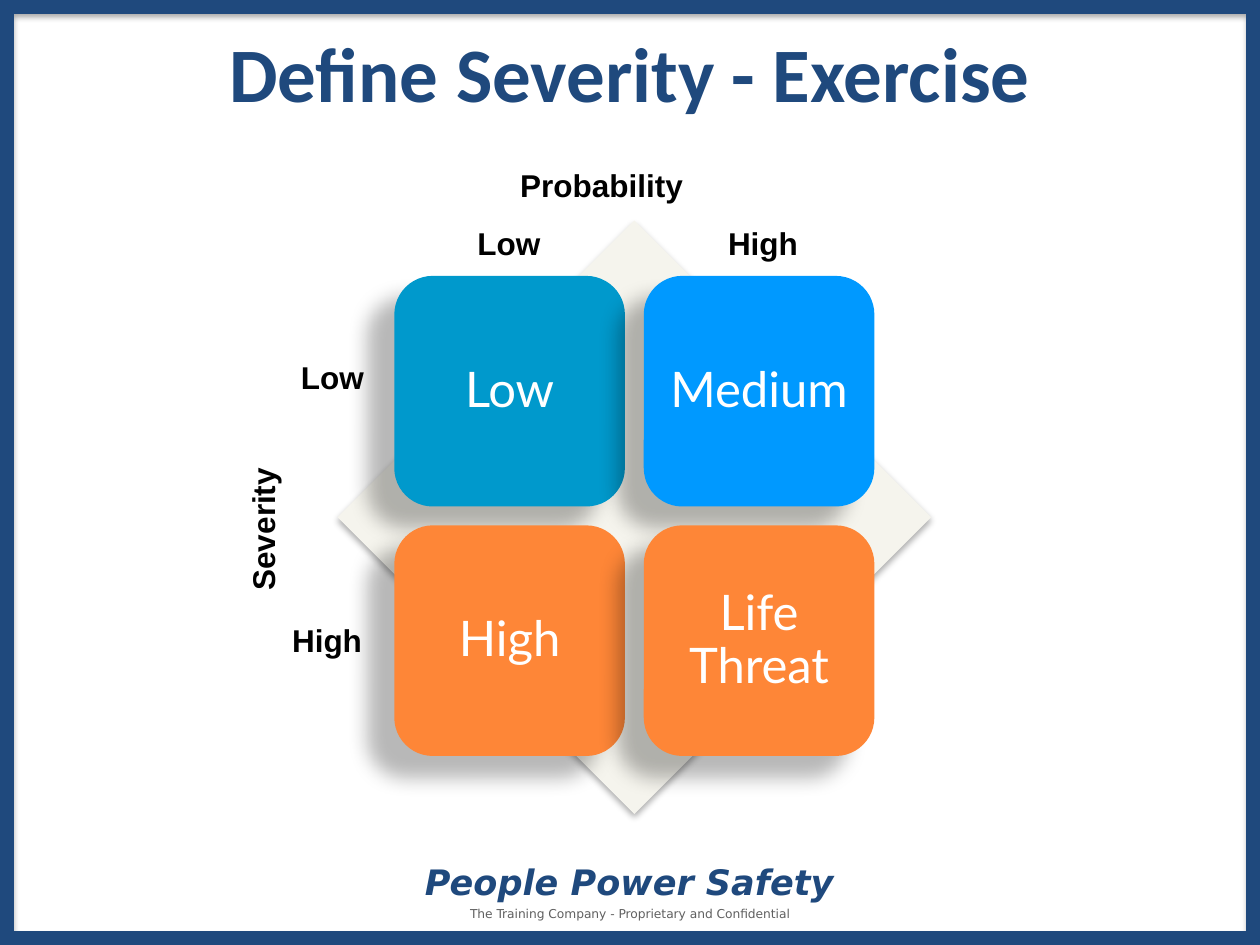
"""Build the severity and probability matrix slide."""
from typing import Any, NamedTuple

from lxml import etree
from pptx import Presentation, util as u
from pptx.dml import color
from pptx.enum import shapes, text
from pptx.oxml import ns

COLOURS = {"navy": "1F497D", "grey": "606060", "cream": "F5F4ED", "teal": "0099CC",
           "blue": "0099FF", "orange": "FE8637", "white": "FFFFFF", "black": "000000"}


class Area(NamedTuple):
    left: float
    top: float
    width: float
    height: float


class Shadow(NamedTuple):
    opacity: int
    blur: float
    distance: float
    angle: int


class Tile(NamedTuple):
    words: str
    colour: str


class Label(NamedTuple):
    words: str
    area: Area
    wrap: bool = False
    rotation: int = 0


BORDER_SHADOW = Shadow(35, 3.1, 1.8, 90)
DIAMOND_SHADOW = Shadow(32, 3.5, 2.2, 90)
TILE_SHADOW = Shadow(28, 11.8, 19.7, 141)
TILE_SIZE, TILE_PITCH, TILE_LEFT, TILE_TOP = 1.83, 1.98, 3.13, 2.19
TILES = [[Tile("Low", "teal"), Tile("Medium", "blue")],
         [Tile("High", "orange"), Tile("Life Threat", "orange")]]
LABELS = [
    Label("Probability", Area(4.03, 1.27, 2.01, 0.52), True),
    Label("Severity", Area(1.36, 3.74, 1.57, 0.52), True, 270),
    Label("Low", Area(2.29, 2.79, 0.71, 0.4)),
    Label("High", Area(2.22, 4.88, 0.76, 0.4)),
    Label("Low", Area(3.69, 1.73, 0.71, 0.4)),
    Label("High", Area(5.68, 1.73, 0.76, 0.4)),
]
LABEL_FONT = {"name": "Arial", "size": u.Pt(18), "bold": True}
TILE_FONT = {"name": "Lato", "size": u.Pt(28)}
TITLE_FONT = {"name": "Calibri", "size": u.Pt(44), "bold": True}
MOTTO_FONT = {"name": "DejaVu Sans", "size": u.Pt(20), "bold": True, "italic": True}
NOTICE_FONT = {"name": "DejaVu Sans", "size": u.Pt(7)}
CENTRE, LEFT = text.PP_ALIGN.CENTER, text.PP_ALIGN.LEFT
MIDDLE, TOP = text.MSO_ANCHOR.MIDDLE, text.MSO_ANCHOR.TOP


def rgb(name: str) -> color.RGBColor:
    """Return a named colour."""
    return color.RGBColor.from_string(COLOURS[name])


def inches(area: Area) -> list[u.Length]:
    """Convert an area to lengths."""
    return [u.Inches(value) for value in area]


def apply(target: Any, values: dict[str, Any]) -> None:
    """Set each named attribute on the target."""
    for name, value in values.items():
        setattr(target, name, value)


def write(shape: Any, words: str, font: dict[str, Any], colour: str,
          align: Any = CENTRE, anchor: Any = MIDDLE, wrap: bool = True,
          inset: float = 0.1) -> Any:
    """Write one formatted paragraph and return it."""
    frame = shape.text_frame
    apply(frame, {"word_wrap": wrap, "auto_size": text.MSO_AUTO_SIZE.NONE,
                  "vertical_anchor": anchor, "margin_left": u.Inches(inset),
                  "margin_right": u.Inches(inset)})
    para = frame.paragraphs[0]
    para.alignment = align
    span = para.add_run()
    span.text = words
    apply(span.font, font)
    span.font.color.rgb = rgb(colour)
    return para


def add_shadow(shape: Any, shadow: Shadow) -> None:
    """Give a shape an outer shadow."""
    shape.shadow.inherit = False
    effects = shape._element.spPr.find(ns.qn("a:effectLst"))
    outer = etree.SubElement(
        effects, ns.qn("a:outerShdw"), blurRad=str(u.Pt(shadow.blur)),
        dist=str(u.Pt(shadow.distance)), dir=str(shadow.angle * 60000),
        rotWithShape="0")
    black = etree.SubElement(outer, ns.qn("a:srgbClr"), val=COLOURS["black"])
    etree.SubElement(black, ns.qn("a:alpha"), val=str(shadow.opacity * 1000))


def add_block(page: Any, kind: Any, area: Area, colour: str, shadow: Shadow) -> Any:
    """Add a filled shape without an outline."""
    block = page.shapes.add_shape(kind, *inches(area))
    block.fill.solid()
    block.fill.fore_color.rgb = rgb(colour)
    block.line.fill.background()
    add_shadow(block, shadow)
    return block


def add_border(page: Any) -> None:
    """Frame the page with square corners."""
    border = page.shapes.add_shape(shapes.MSO_SHAPE.RECTANGLE,
                                   *inches(Area(0.05, 0.05, 9.9, 7.4)))
    border.fill.background()
    border.line.color.rgb = rgb("navy")
    border.line.width = u.Pt(8.75)
    outline = border._element.spPr.find(ns.qn("a:ln"))
    etree.SubElement(outline, ns.qn("a:miter"), lim="800000")
    add_shadow(border, BORDER_SHADOW)


def add_footer(page: Any) -> None:
    """Add the notice and the motto."""
    notice = page.shapes.add_textbox(*inches(Area(3.31, 7.14, 3.38, 0.22)))
    write(notice, "The Training Company - Proprietary and Confidential",
          NOTICE_FONT, "grey", anchor=TOP)
    motto = page.shapes.add_textbox(*inches(Area(3.24, 6.86, 3.51, 0.27)))
    write(motto, "People Power Safety", MOTTO_FONT, "navy", inset=0)


def add_matrix(page: Any) -> None:
    """Add the diamond and the grid of tiles."""
    add_block(page, shapes.MSO_SHAPE.DIAMOND, Area(2.68, 1.75, 4.71, 4.71),
              "cream", DIAMOND_SHADOW)
    for row, tiles in enumerate(TILES):
        for column, tile in enumerate(tiles):
            area = Area(TILE_LEFT + column * TILE_PITCH, TILE_TOP + row * TILE_PITCH,
                        TILE_SIZE, TILE_SIZE)
            block = add_block(page, shapes.MSO_SHAPE.ROUNDED_RECTANGLE, area,
                              tile.colour, TILE_SHADOW)
            para = write(block, tile.words, TILE_FONT, "white")
            para.line_spacing = 0.9


def add_label(page: Any, label: Label) -> None:
    """Add an axis label."""
    box = page.shapes.add_textbox(*inches(label.area))
    box.rotation = label.rotation
    write(box, label.words, LABEL_FONT, "black", LEFT, TOP, label.wrap)


def main() -> None:
    """Build and save the deck."""
    deck = Presentation()
    apply(deck, {"slide_width": u.Inches(10), "slide_height": u.Inches(7.5)})
    page = deck.slides.add_slide(deck.slide_layouts[5])
    add_border(page)
    add_footer(page)
    add_matrix(page)
    title = page.shapes.title
    apply(title, dict(zip(("left", "top", "width", "height"),
                          inches(Area(0, 0.14, 10, 0.86)))))
    write(title, "Define Severity - Exercise", TITLE_FONT, "navy")
    for label in LABELS:
        add_label(page, label)
    deck.save("out.pptx")


if __name__ == "__main__":
    main()
